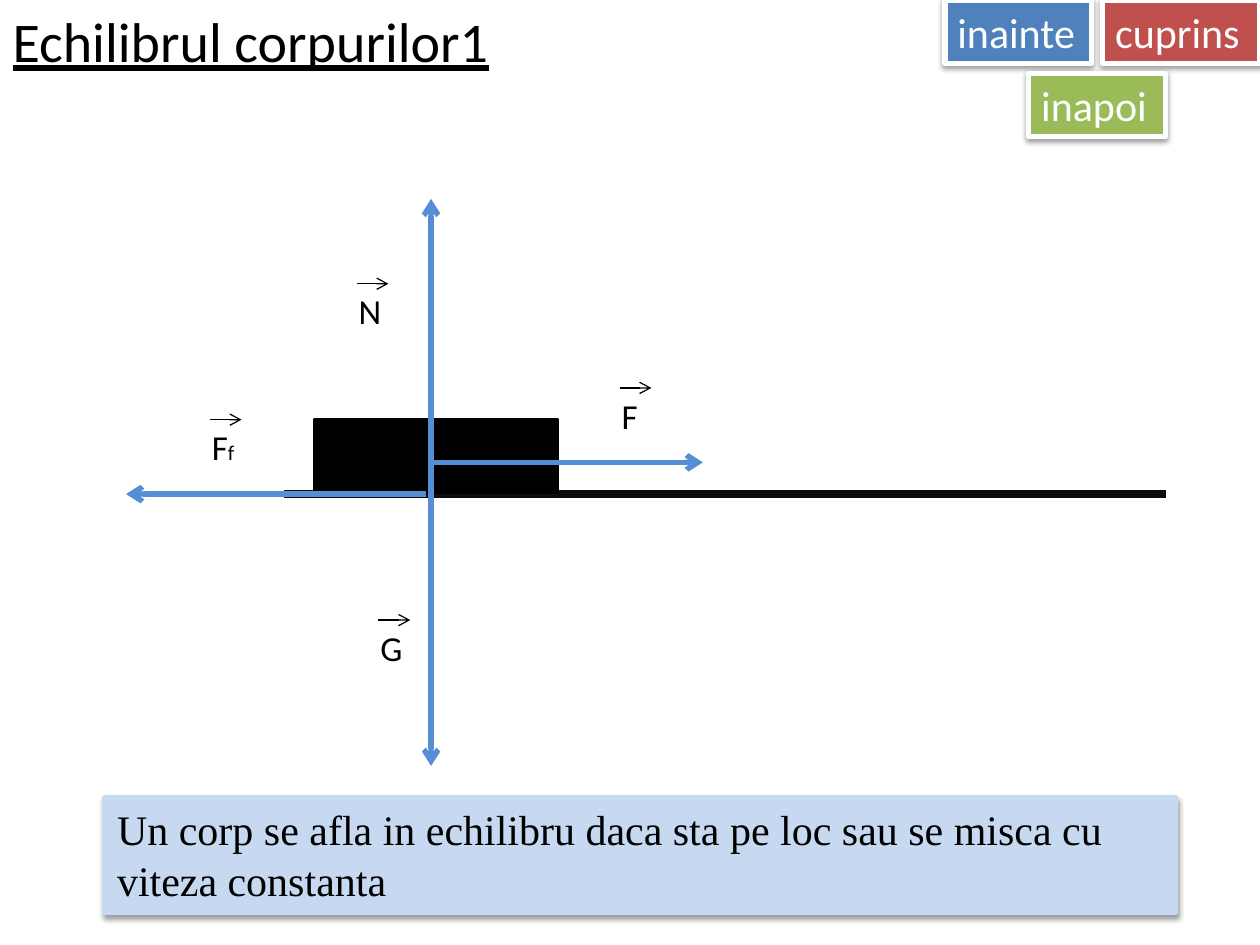
import pptx
import pptx.enum.shapes
import pptx.enum.text
import pptx.oxml
import pptx.oxml.ns
import pptx.util
from pptx.dml.color import RGBColor
from pptx.util import Cm

BLACK = RGBColor(0x00, 0x00, 0x00)
WHITE = RGBColor(0xFF, 0xFF, 0xFF)
GROUND = RGBColor(0x0D, 0x0D, 0x0D)
FORCE = RGBColor(0x55, 0x8E, 0xD5)
PALE_BLUE = RGBColor(0xC6, 0xD9, 0xF1)
RED = RGBColor(0xC0, 0x50, 0x4D)
BLUE = RGBColor(0x4F, 0x81, 0xBD)
GREEN = RGBColor(0x9B, 0xBB, 0x59)

SHADOW_XML = (
    '<a:outerShdw %s blurRad="40000" dist="20000" dir="5400000" rotWithShape="0">'
    '<a:srgbClr val="000000"><a:alpha val="38000"/></a:srgbClr></a:outerShdw>'
    % pptx.oxml.ns.nsdecls("a")
)


class ForceSlide:
    font = {"name": "Calibri"}

    def __init__(self, deck):
        self.slide = deck.slides.add_slide(deck.slide_layouts[5])
        self.shapes = self.slide.shapes

    def set_text(self, frame, runs, color=BLACK, **changes):
        frame_format = {
            "word_wrap": True,
            "auto_size": pptx.enum.text.MSO_AUTO_SIZE.NONE,
            "vertical_anchor": pptx.enum.text.MSO_ANCHOR.TOP,
        }
        for key, value in frame_format.items():
            setattr(frame, key, value)
        paragraph = frame.paragraphs[0]
        paragraph.alignment = pptx.enum.text.PP_ALIGN.LEFT
        for words, size in runs:
            run = paragraph.add_run()
            run.text = words
            run.font.color.rgb = color
            for key, value in {**self.font, "size": pptx.util.Pt(size), **changes}.items():
                setattr(run.font, key, value)

    def title(self, words, left, top, width, height):
        heading = self.shapes.title
        place = {"left": left, "top": top, "width": width, "height": height}
        for key, value in place.items():
            setattr(heading, key, Cm(value))
        self.set_text(heading.text_frame, [(words, 32)], underline=True)

    def box(self, left, top, width, height, fill, border, weight):
        box = self.shapes.add_shape(
            pptx.enum.shapes.MSO_SHAPE.RECTANGLE, Cm(left), Cm(top), Cm(width), Cm(height)
        )
        box.fill.solid()
        box.fill.fore_color.rgb = fill
        box.line.color.rgb = border
        box.line.width = pptx.util.Pt(weight)
        box.shadow.inherit = False
        return box

    def panel(self, words, place, fill, border, color, **changes):
        panel = self.box(*place, fill, border, 3)
        effects = panel._element.spPr.find(pptx.oxml.ns.qn("a:effectLst"))
        effects.append(pptx.oxml.parse_xml(SHADOW_XML))
        self.set_text(panel.text_frame, [(words, 24)], color, **changes)

    def line(self, start, end, color, weight, arrow=True):
        line = self.shapes.add_connector(
            pptx.enum.shapes.MSO_CONNECTOR.STRAIGHT, *map(Cm, start + end)
        )
        line.line.color.rgb = color
        line.line.width = pptx.util.Pt(weight)
        properties = line._element.spPr
        if arrow:
            outline = properties.find(pptx.oxml.ns.qn("a:ln"))
            outline.append(outline.makeelement(pptx.oxml.ns.qn("a:tailEnd"), {"type": "arrow"}))
        properties.append(properties.makeelement(pptx.oxml.ns.qn("a:effectLst"), {}))

    def vector_label(self, left, top, width, runs):
        label = self.shapes.add_textbox(Cm(left), Cm(top), Cm(width), Cm(1.12))
        self.set_text(label.text_frame, runs)
        self.line((left + 0.21, top), (left + 0.85, top), BLACK, 0.75)


def main():
    deck = pptx.Presentation()
    deck.slide_width, deck.slide_height = Cm(25.4), Cm(19.05)
    page = ForceSlide(deck)
    page.title("Echilibrul corpurilor1", 0, 0, 18.62, 1.63)

    ground_level = 9.96
    center = (8.69, 9.32)
    page.line((23.5, ground_level), (5.72, ground_level), GROUND, 4.5, arrow=False)
    page.box(6.35, 8.46, 4.88, 1.47, BLACK, BLACK, 2)

    forces = [
        (center, (center[0], 15.44)),
        ((8.59, ground_level), (2.54, ground_level)),
        (center, (14.17, center[1])),
        (center, (center[0], 4.01)),
    ]
    for start, end in forces:
        page.line(start, end, FORCE, 3)

    vector_labels = [
        (7.42, 12.5, 0.85, [("G", 20)]),
        (12.28, 7.82, 0.85, [("F", 20)]),
        (4.02, 8.46, 1.27, [("F", 20), ("f", 12)]),
        (6.98, 5.72, 0.85, [("N", 20)]),
    ]
    for label in vector_labels:
        page.vector_label(*label)

    page.panel(
        "Un corp se afla in echilibru daca sta pe loc sau se misca cu viteza constanta",
        (2.11, 16.08, 21.59, 2.31), PALE_BLUE, PALE_BLUE, BLACK, name="Times New Roman",
    )
    navigation = [
        ("cuprins", (22.23, 0, 3.17, 1.28), RED),
        ("inainte", (19.05, 0, 2.96, 1.28), BLUE),
        ("inapoi", (20.74, 1.48, 2.75, 1.28), GREEN),
    ]
    for words, place, fill in navigation:
        page.panel(words, place, fill, WHITE, WHITE)

    deck.save("out.pptx")


if __name__ == "__main__":
    main()
